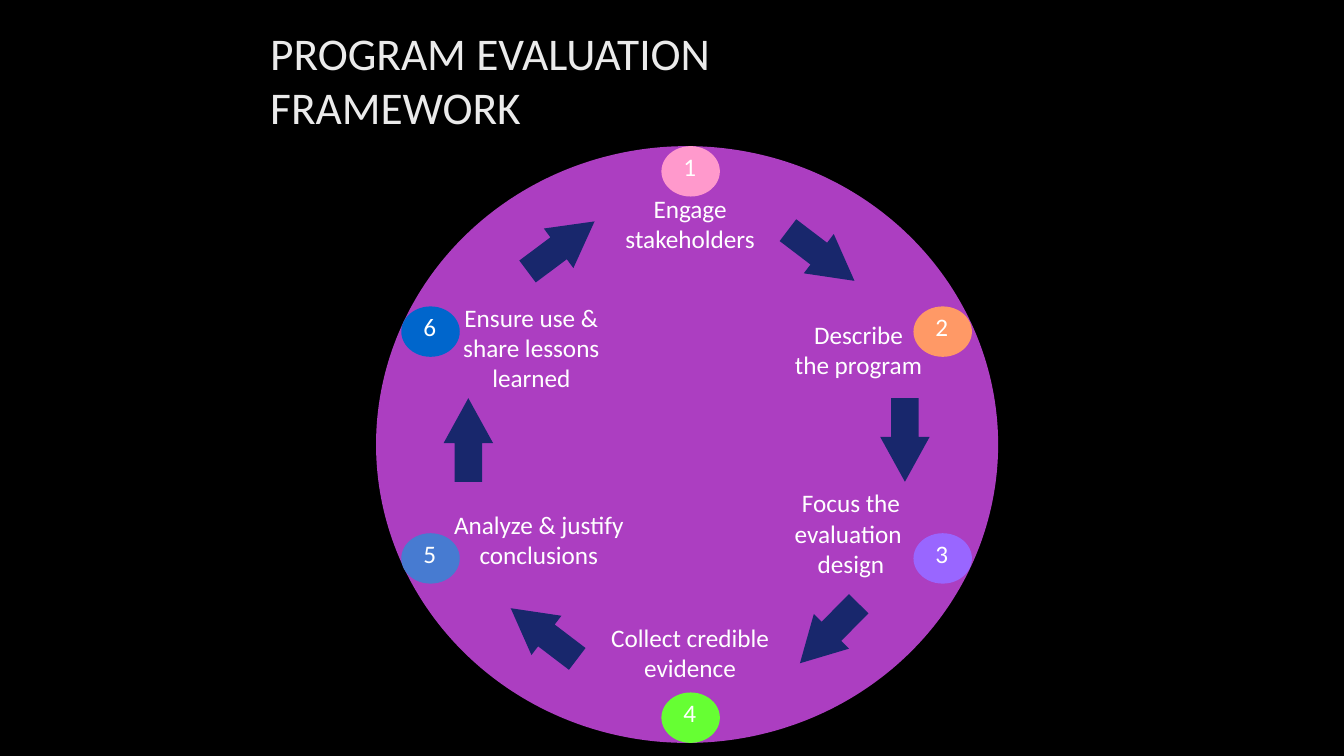
"""Build the program evaluation framework slide: six steps around a circle."""
from pptx import Presentation
from pptx import util as u
from pptx.dml.color import RGBColor
from pptx.enum import shapes, text

PX = 9144
SLIDE_SIZE = (1333, 750)
THEME = {
    "font": "Calibri",
    "title_size": 32.4,
    "body_size": 18,
    "background": "000000",
    "title": "EBEBEB",
    "body": "FFFFFF",
    "circle": "AC3EC1",
    "arrow": "18276C",
}

TITLE = ("PROGRAM EVALUATION \vFRAMEWORK", (258, 33, 1042, 92))
CIRCLE = (373, 145, 617, 592)
BADGE_SIZE = (58, 50)
NUMBER_SIZE = (34, 40)
ARROW_SIZE = (83, 49)
ARROW_ADJUSTMENTS = (0.554, 0.908)

# label, label box, badge corner, badge colour
STEPS = [
    ("Engage stakeholders", (573, 187, 223, 70), (656, 145), "FF99CC"),
    ("Describe\vthe program", (740, 312, 223, 70), (906, 304), "FF9966"),
    ("Focus the evaluation \vdesign", (740, 479, 208, 100), (906, 529), "9966FF"),
    ("Collect credible evidence", (573, 612, 223, 70), (656, 687), "66FF33"),
    ("Analyze & justify conclusions", (423, 500, 223, 70), (398, 529), "477BD1"),
    ("Ensure use & share lessons learned", (431, 295, 192, 100), (398, 304), "0066CC"),
]
ARROWS = [
    ((773, 229), 37.3),
    ((856, 412), 90),
    ((781, 604), 134.6),
    ((498, 604), 217.3),
    ((423, 412), 270),
    ((515, 220), 323.2),
]


def scale(box):
    return [length * PX for length in box]


def set_attributes(target, values):
    for name, value in values.items():
        setattr(target, name, value)


def paint(fill, colour):
    fill.solid()
    fill.fore_color.rgb = RGBColor.from_string(colour)


def write(shape, words, size, colour, alignment, **frame_format):
    frame = shape.text_frame
    frame.text = words
    set_attributes(frame, frame_format)
    paragraph = frame.paragraphs[0]
    paragraph.alignment = alignment
    for run in paragraph.runs:
        set_attributes(run.font, {"name": THEME["font"], "size": u.Pt(size)})
        run.font.color.rgb = RGBColor.from_string(colour)


def add_filled(parent, kind, box, colour):
    shape = parent.add_shape(kind, *scale(box))
    shape.shadow.inherit = False
    paint(shape.fill, colour)
    shape.line.fill.background()
    return shape


def add_words(parent, words, box, alignment, wrap):
    write(parent.add_textbox(*scale(box)), words, THEME["body_size"], THEME["body"],
          alignment, word_wrap=wrap, auto_size=text.MSO_AUTO_SIZE.SHAPE_TO_FIT_TEXT)


def add_title(slide):
    words, box = TITLE
    title = slide.shapes.title
    set_attributes(title, dict(zip(("left", "top", "width", "height"), scale(box))))
    write(title, words, THEME["title_size"], THEME["title"], text.PP_ALIGN.LEFT,
          vertical_anchor=text.MSO_ANCHOR.MIDDLE, auto_size=text.MSO_AUTO_SIZE.NONE)


def add_arrow(slide, corner, rotation):
    arrow = add_filled(slide.shapes, shapes.MSO_SHAPE.RIGHT_ARROW,
                       corner + ARROW_SIZE, THEME["arrow"])
    arrow.rotation = rotation
    for index, value in enumerate(ARROW_ADJUSTMENTS):
        arrow.adjustments[index] = value


def add_step(slide, number, label, label_box, corner, colour):
    step = slide.shapes.add_group_shape().shapes
    add_words(step, label, label_box, text.PP_ALIGN.CENTER, True)
    add_filled(step, shapes.MSO_SHAPE.OVAL, corner + BADGE_SIZE, colour)
    left, top = corner
    inset = (BADGE_SIZE[0] - NUMBER_SIZE[0]) // 2
    add_words(step, str(number), (left + inset, top) + NUMBER_SIZE,
              text.PP_ALIGN.LEFT, False)


def main():
    presentation = Presentation()
    width, height = scale(SLIDE_SIZE)
    set_attributes(presentation, {"slide_width": width, "slide_height": height})
    slide = presentation.slides.add_slide(presentation.slide_layouts[5])
    paint(slide.background.fill, THEME["background"])
    add_title(slide)
    add_filled(slide.shapes, shapes.MSO_SHAPE.OVAL, CIRCLE, THEME["circle"])
    for corner, rotation in ARROWS:
        add_arrow(slide, corner, rotation)
    for number, step in enumerate(STEPS, start=1):
        add_step(slide, number, *step)
    presentation.save("out.pptx")


if __name__ == "__main__":
    main()
